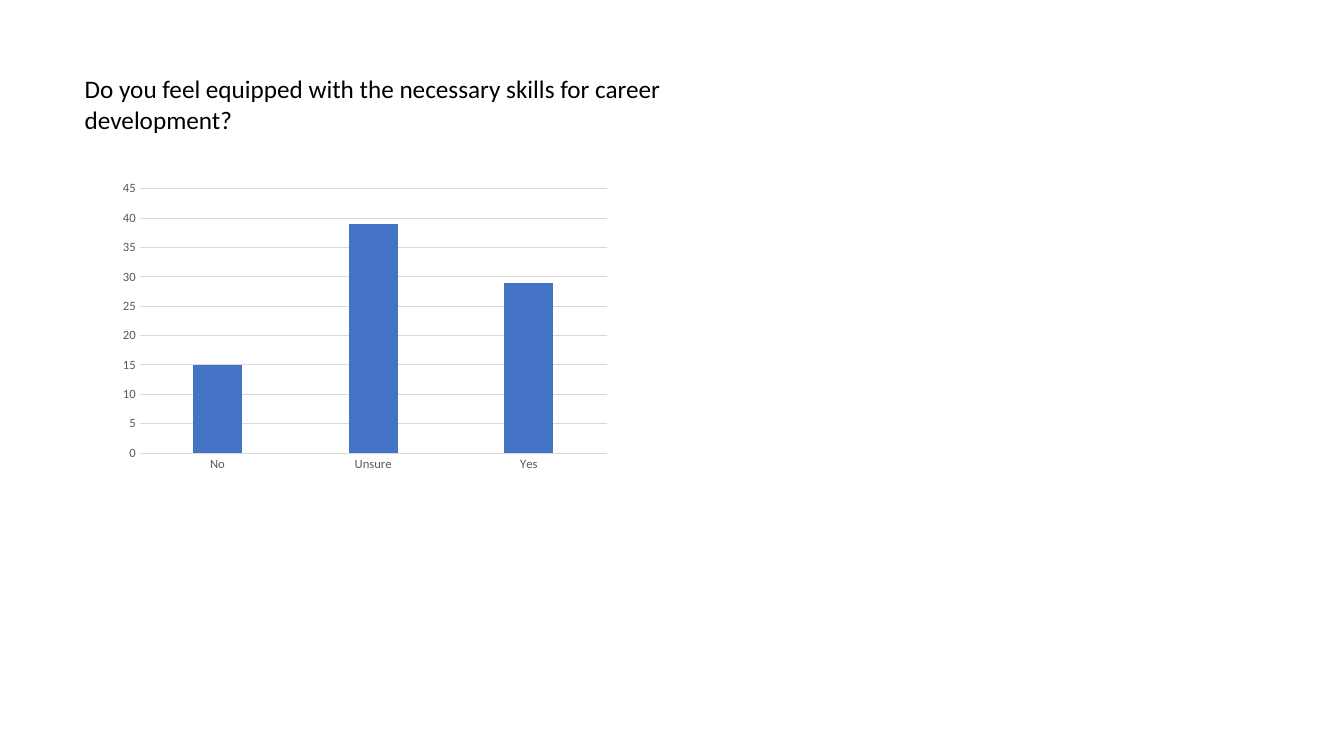
from pptx import Presentation
from pptx.chart.data import CategoryChartData
from pptx.dml.color import RGBColor
from pptx.enum.chart import XL_CHART_TYPE, XL_TICK_MARK
from pptx.enum.text import MSO_ANCHOR, MSO_AUTO_SIZE, PP_ALIGN
from pptx.util import Pt

COLUMNS = XL_CHART_TYPE.COLUMN_CLUSTERED
NO_TICK = XL_TICK_MARK.NONE
TOP = MSO_ANCHOR.TOP
FIT_SHAPE = MSO_AUTO_SIZE.SHAPE_TO_FIT_TEXT
LEFT = PP_ALIGN.LEFT

QUESTION = "Do you feel equipped with the necessary skills for career development?"
ANSWERS = {"No": 15, "Unsure": 39, "Yes": 29}

FONT = "Calibri"
BLACK, GREY, RULE, BLUE = "000000", "595959", "D9D9D9", "4472C4"
SLIDE_SIZE = (960, 540)
TITLE_BOX = (53.3, 49, 480, 51)
CHART_BOX = (80.6, 125.3, 360, 216)


def rgb(color):
    return RGBColor.from_string(color)


def style_font(font, size, color):
    font.name = FONT
    font.size = Pt(size)
    font.color.rgb = rgb(color)


def style_line(line):
    line.color.rgb = rgb(RULE)
    line.width = Pt(0.75)


def add_title(slide):
    sp = slide.shapes.title
    sp.left, sp.top, sp.width, sp.height = map(Pt, TITLE_BOX)
    tf = sp.text_frame
    tf.word_wrap = True
    tf.auto_size = FIT_SHAPE
    tf.vertical_anchor = TOP
    p = tf.paragraphs[0]
    p.alignment = LEFT
    r = p.add_run()
    r.text = QUESTION
    style_font(r.font, 18, BLACK)


def add_answer_chart(slide):
    data = CategoryChartData()
    data.categories = list(ANSWERS)
    data.add_series("Series 1", list(ANSWERS.values()))
    chart = slide.shapes.add_chart(COLUMNS, *map(Pt, CHART_BOX), data).chart
    chart.has_title = False
    chart.has_legend = False
    style_font(chart.font, 10, BLACK)

    plot = chart.plots[0]
    plot.gap_width = 219
    plot.overlap = -27
    plot.vary_by_categories = False
    fill = plot.series[0].format.fill
    fill.solid()
    fill.fore_color.rgb = rgb(BLUE)

    for axis in (chart.category_axis, chart.value_axis):
        axis.major_tick_mark = NO_TICK
        axis.minor_tick_mark = NO_TICK
        style_font(axis.tick_labels.font, 9, GREY)
    style_line(chart.category_axis.format.line)
    chart.value_axis.format.line.fill.background()
    chart.value_axis.has_major_gridlines = True
    style_line(chart.value_axis.major_gridlines.format.line)


def main():
    prs = Presentation()
    prs.slide_width, prs.slide_height = map(Pt, SLIDE_SIZE)
    slide = prs.slides.add_slide(prs.slide_layouts[5])
    add_title(slide)
    add_answer_chart(slide)
    prs.save("out.pptx")


if __name__ == "__main__":
    main()
